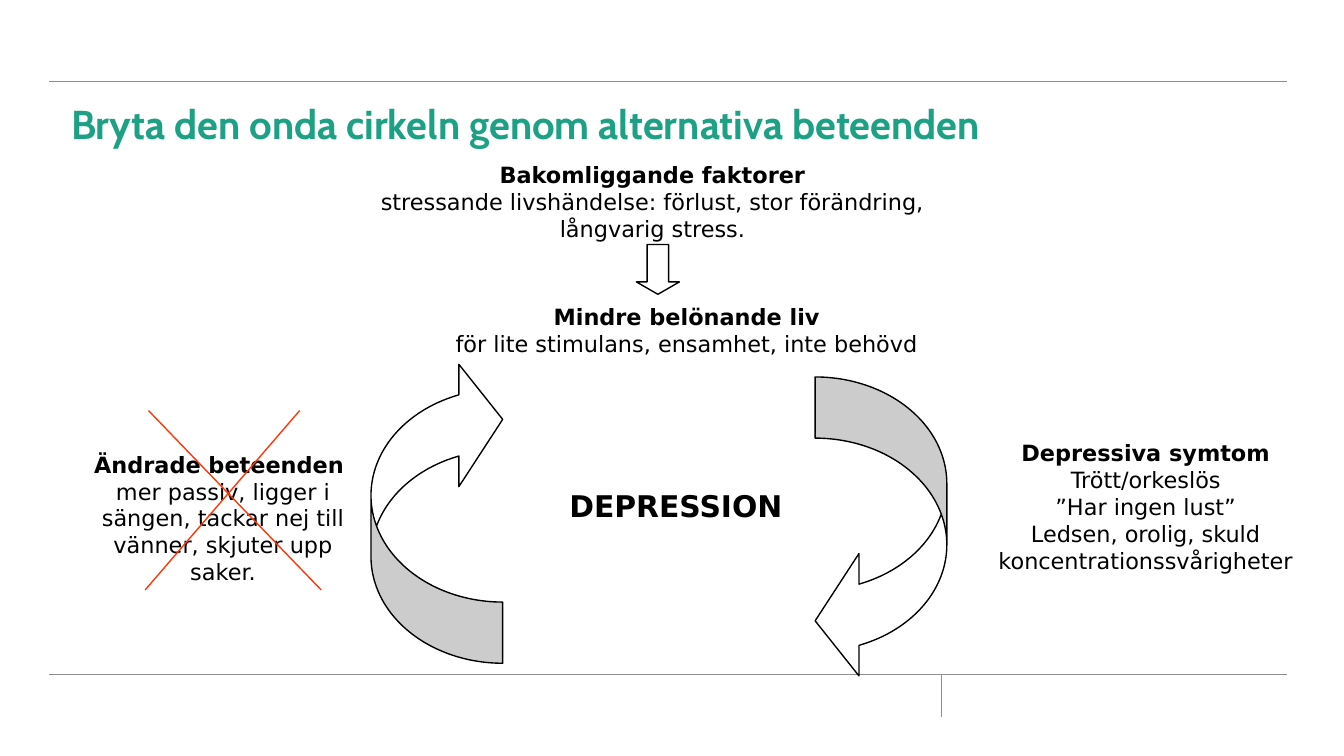
from lxml import etree
from pptx import Presentation
from pptx.dml.color import RGBColor
from pptx.enum.shapes import MSO_CONNECTOR, MSO_SHAPE
from pptx.enum.text import MSO_ANCHOR, PP_ALIGN
from pptx.oxml.ns import qn
from pptx.util import Inches, Pt

STRAIGHT = MSO_CONNECTOR.STRAIGHT
RECTANGLE = MSO_SHAPE.RECTANGLE
CURVED_ARROW = MSO_SHAPE.CURVED_LEFT_ARROW
DOWN_ARROW = MSO_SHAPE.DOWN_ARROW
TOP, BOTTOM = MSO_ANCHOR.TOP, MSO_ANCHOR.BOTTOM
LEFT, CENTER = PP_ALIGN.LEFT, PP_ALIGN.CENTER

COLORS = {name: RGBColor.from_string(value) for name, value in {
    "rule": "8B8D8E", "title": "1CA185", "text": "000000",
    "paper": "FFFFFF", "cross": "FF3707"}.items()}

presentation = Presentation()
presentation.slide_width = Inches(10)
presentation.slide_height = presentation.slide_width * 9 // 16
slide = presentation.slides.add_slide(presentation.slide_layouts[6])
shapes = slide.shapes

# Square grid: 100 columns across the slide, rows of the same size
CELL = presentation.slide_width / 100


def grid(*cells):
    return [round(cell * CELL) for cell in cells]


def add_line(ends, color, width):
    line = shapes.add_connector(STRAIGHT, *grid(*ends))
    line.line.color.rgb = COLORS[color]
    line.line.width = Pt(width)
    etree.SubElement(line._element.spPr, qn("a:effectLst"))


# Frame lines
for ends in [(3.65, 6.05, 95.75, 6.05), (3.65, 50.2, 95.75, 50.2),
             (70.05, 50.2, 70.05, 53.35)]:
    add_line(ends, "rule", 0.25)

# Texts: the first paragraph of each is a bold heading
title_style = ("Cabin", 21.6, "title", LEFT, BOTTOM)
body_style = ("DejaVu Sans", 12, "text", CENTER, TOP)
center_style = ("DejaVu Sans", 16, "text", CENTER, TOP)
for box, filled, style, lines in [
    ((4.3, 6.2, 89.8, 5.3), False, title_style,
     ["Bryta den onda cirkeln genom alternativa beteenden"]),
    ((24.15, 11.5, 48.8, 6.9), True, body_style,
     ["Bakomliggande faktorer",
      "stressande livshändelse: förlust, stor förändring, långvarig stress."]),
    ((5.8, 33.05, 21.6, 18.4), False, body_style,
     ["Ändrade beteenden ",
      "mer passiv, ligger i sängen, tackar nej till vänner, skjuter upp saker."]),
    ((29.25, 22.05, 43.7, 8.5), False, body_style,
     ["Mindre belönande liv", "för lite stimulans, ensamhet, inte behövd"]),
    ((72.5, 32.2, 25.5, 17.2), True, body_style,
     ["Depressiva symtom", "Trött/orkeslös", "”Har ingen lust”",
      "Ledsen, orolig, skuld", "koncentrationssvårigheter"]),
    ((39.5, 35.8, 21.6, 6.2), True, center_style, ["DEPRESSION"]),
]:
    if filled:
        shape = shapes.add_shape(RECTANGLE, *grid(*box))
        shape.shadow.inherit = False
        shape.fill.solid()
        shape.fill.fore_color.rgb = COLORS["paper"]
        shape.line.fill.background()
    else:
        shape = shapes.add_textbox(*grid(*box))
    font_name, size, color, alignment, anchor = style
    text_frame = shape.text_frame
    text_frame.word_wrap = True
    text_frame.vertical_anchor = anchor
    text_frame.text = "\n".join(lines)
    for index, paragraph in enumerate(text_frame.paragraphs):
        paragraph.alignment = alignment
        font = paragraph.runs[0].font
        font.name, font.size, font.bold = font_name, Pt(size), index == 0
        font.color.rgb = COLORS[color]

# Arrows: box, preset, adjustments, rotation
cycle = (0.465, 0.929, 0.333)
for box, preset, adjustments, rotation in [
    ((27.6, 26.65, 9.8, 22.7), CURVED_ARROW, cycle, 180),
    ((60.65, 28.05, 9.8, 22.7), CURVED_ARROW, cycle, 0),
    ((47.35, 18.2, 3.2, 3.7), DOWN_ARROW, (0.5, 0.287), 0),
]:
    arrow = shapes.add_shape(preset, *grid(*box))
    arrow.shadow.inherit = False
    for index, value in enumerate(adjustments):
        arrow.adjustments[index] = value
    arrow.rotation = rotation
    arrow.fill.solid()
    arrow.fill.fore_color.rgb = COLORS["paper"]
    arrow.line.color.rgb = COLORS["text"]
    arrow.line.width = Pt(0.75)

# Cross over the changed behaviours
for ends in [(11.05, 30.55, 23.9, 43.9), (22.3, 30.55, 10.8, 43.9)]:
    add_line(ends, "cross", 0.75)

presentation.save("out.pptx")
